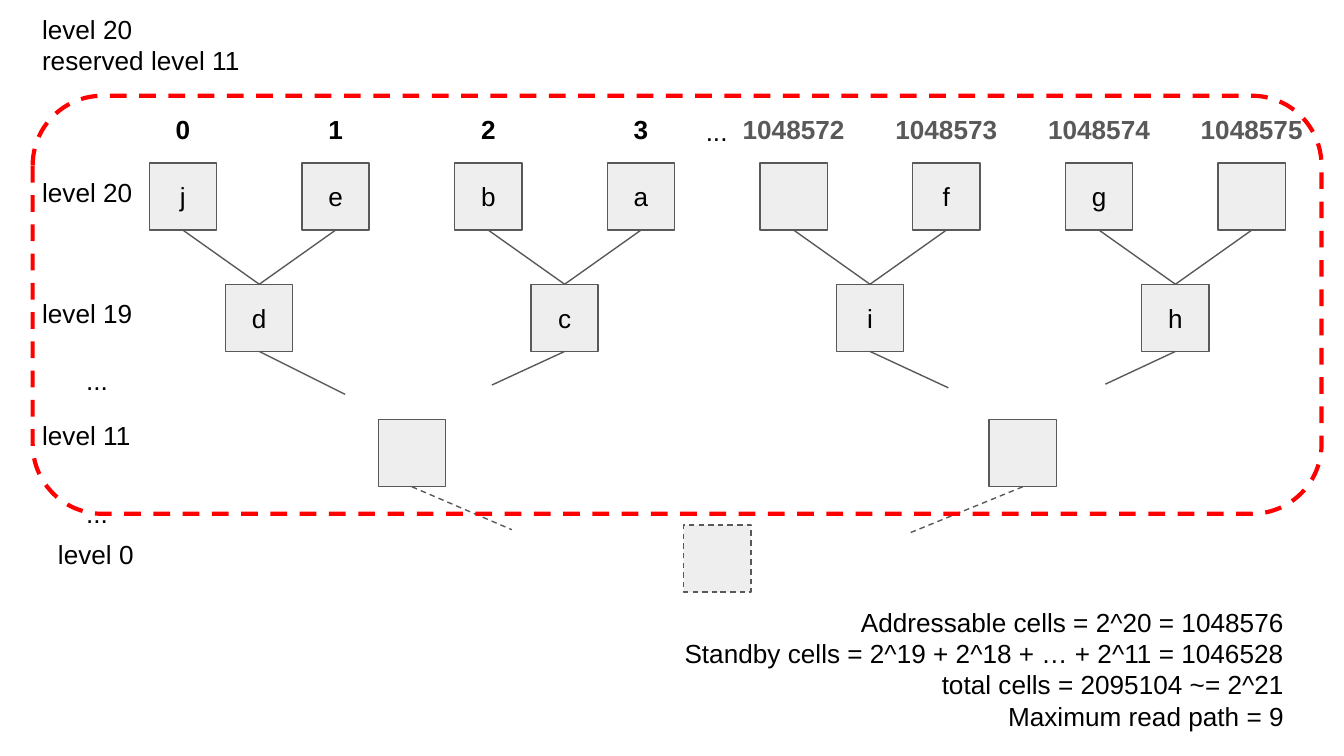
from dataclasses import dataclass

from lxml.etree import SubElement
from pptx import Presentation
from pptx.dml.color import RGBColor
from pptx.enum.dml import MSO_LINE
from pptx.enum.shapes import MSO_CONNECTOR, MSO_SHAPE
from pptx.enum.text import MSO_ANCHOR, MSO_AUTO_SIZE, PP_ALIGN
from pptx.oxml.ns import qn
from pptx.util import Pt

BLACK = RGBColor(0x00, 0x00, 0x00)
GRAY = RGBColor(0x59, 0x59, 0x59)
LIGHT = RGBColor(0xEE, 0xEE, 0xEE)
RED = RGBColor(0xFF, 0x00, 0x00)

NODE = 36
PITCH = 81.8
FIRST_LEAF = 62.5
ROW_TOPS = (36, 101, 173.5, 230)
LEAVES = ("j", "e", "b", "a", "", "f", "g", "")
PARENTS = ("d", "c", "i", "h")
NUMBERS = ("0", "1", "2", "3", "1048572", "1048573", "1048574", "1048575")
PARENT_STUBS = ((46, 23), (-39, 18), (42, 19.5), (-37.5, 17.5))
RESERVED_STUBS = ((53.5, 23), (-60, 24.5))
ROW_LABELS = (
    ("level 20", -2, 36, 64),
    ("level 19", -2, 101, 64),
    ("...", 21.5, 136.5, 27),
    ("level 11", -2, 166, 64),
    ("...", 21.5, 208, 27),
    ("level 0", 6.5, 230, 56),
    ("...", 353.5, 3.5, 27),
)
HEADING = ("level 20", "reserved level 11")
SUMMARY = (
    "Addressable cells = 2^20 = 1048576",
    "Standby cells = 2^19 + 2^18 + … + 2^11 = 1046528",
    "total cells = 2095104 ~= 2^21",
    "Maximum read path = 9",
)


@dataclass
class Box:
    """A rectangle in points."""
    left: float
    top: float
    width: float
    height: float

    def lengths(self):
        """Return the four lengths for a shape call."""
        return Pt(self.left), Pt(self.top), Pt(self.width), Pt(self.height)

    def inner(self, left, top, width, height):
        """Return a box placed relative to this one."""
        return Box(self.left + left, self.top + top, width, height)


def write_text(frame, *lines, color=BLACK, bold=False, align=PP_ALIGN.LEFT,
               anchor=MSO_ANCHOR.TOP):
    """Fill a text frame with one paragraph for each line."""
    frame.word_wrap = True
    frame.auto_size = MSO_AUTO_SIZE.NONE
    frame.vertical_anchor = anchor
    frame.margin_left = frame.margin_right = Pt(7.2)
    frame.margin_top = frame.margin_bottom = Pt(7.2)
    frame.text = "\n".join(lines)
    for paragraph in frame.paragraphs:
        paragraph.alignment = align
        for run in paragraph.runs:
            run.font.name = "Arial"
            run.font.size = Pt(14)
            run.font.bold = bold
            run.font.color.rgb = color


def add_text(slide, box, *lines, **text_format):
    """Add a text box."""
    shape = slide.shapes.add_textbox(*box.lengths())
    write_text(shape.text_frame, *lines, **text_format)


def set_line(line, color=GRAY, width=0.75, dashed=False):
    """Format an outline or connector line."""
    line.color.rgb = color
    line.width = Pt(width)
    if dashed:
        line.dash_style = MSO_LINE.DASH


def add_node(slide, box, text="", dashed=False):
    """Add one square tree cell."""
    shape = slide.shapes.add_shape(MSO_SHAPE.RECTANGLE, *box.lengths())
    shape.shadow.inherit = False
    shape.fill.solid()
    shape.fill.fore_color.rgb = LIGHT
    set_line(shape.line, dashed=dashed)
    if text:
        write_text(shape.text_frame, text, align=PP_ALIGN.CENTER, anchor=MSO_ANCHOR.MIDDLE)
    return shape


def add_edge(slide, child, parent=None, stub=(0, 0), dashed=False):
    """Draw a line from a cell's bottom to its parent or along a stub."""
    start_x, start_y = child.left + child.width // 2, child.top + child.height
    edge = slide.shapes.add_connector(
        MSO_CONNECTOR.STRAIGHT, start_x, start_y,
        start_x + Pt(stub[0]), start_y + Pt(stub[1]))
    edge.begin_connect(child, 2)
    if parent is not None:
        edge.end_connect(parent, 0)
    set_line(edge.line, dashed=dashed)
    SubElement(edge.element.spPr, qn("a:effectLst"))


def add_row(slide, box, level, texts, dashed=False):
    """Add a tree row whose cells are centred over the leaves they span."""
    span = 2 ** level
    first = FIRST_LEAF + (span - 1) / 2 * PITCH
    return [
        add_node(slide, box.inner(first + index * span * PITCH, ROW_TOPS[level], NODE, NODE),
                 text, dashed)
        for index, text in enumerate(texts)
    ]


def add_tree(slide, box):
    """Draw the cells and the lines between them."""
    leaves = add_row(slide, box, 0, LEAVES)
    parents = add_row(slide, box, 1, PARENTS)
    reserved = add_row(slide, box, 2, ("", ""))
    for index, leaf in enumerate(leaves):
        add_edge(slide, leaf, parent=parents[index // 2])
    for parent, stub in zip(parents, PARENT_STUBS):
        add_edge(slide, parent, stub=stub)
    for cell, stub in zip(reserved, RESERVED_STUBS):
        add_edge(slide, cell, stub=stub, dashed=True)
    add_row(slide, box, 3, ("",), dashed=True)


def add_labels(slide, box):
    """Write the leaf numbers and the level names."""
    for index, number in enumerate(NUMBERS):
        left = FIRST_LEAF + index * PITCH + (NODE - 72) / 2
        add_text(slide, box.inner(left, 0, 72, 36), number, bold=True,
                 color=BLACK if index < 4 else GRAY,
                 align=PP_ALIGN.CENTER, anchor=MSO_ANCHOR.MIDDLE)
    for text, left, top, width in ROW_LABELS:
        add_text(slide, box.inner(left, top, width, NODE), text)


def add_frame(slide, box):
    """Outline the reserved levels."""
    shape = slide.shapes.add_shape(MSO_SHAPE.ROUNDED_RECTANGLE, *box.lengths())
    shape.shadow.inherit = False
    shape.fill.background()
    set_line(shape.line, RED, 2.25, dashed=True)


def add_heading(slide, box):
    """Place and fill the title placeholder."""
    title = slide.shapes.title
    title.left, title.top, title.width, title.height = box.lengths()
    write_text(title.text_frame, *HEADING)


def main():
    """Build and save the slide."""
    presentation = Presentation()
    presentation.slide_width, presentation.slide_height = Pt(720), Pt(405)
    slide = presentation.slides.add_slide(presentation.slide_layouts[5])
    reserved_box = Box(17.5, 51.3, 690.5, 224)
    add_heading(slide, Box(15.3, 0, 533, 55))
    add_tree(slide, reserved_box)
    add_labels(slide, reserved_box)
    add_frame(slide, reserved_box)
    add_text(slide, Box(287, 317.5, 408, 73.5), *SUMMARY, align=PP_ALIGN.RIGHT)
    presentation.save("out.pptx")


if __name__ == "__main__":
    main()
